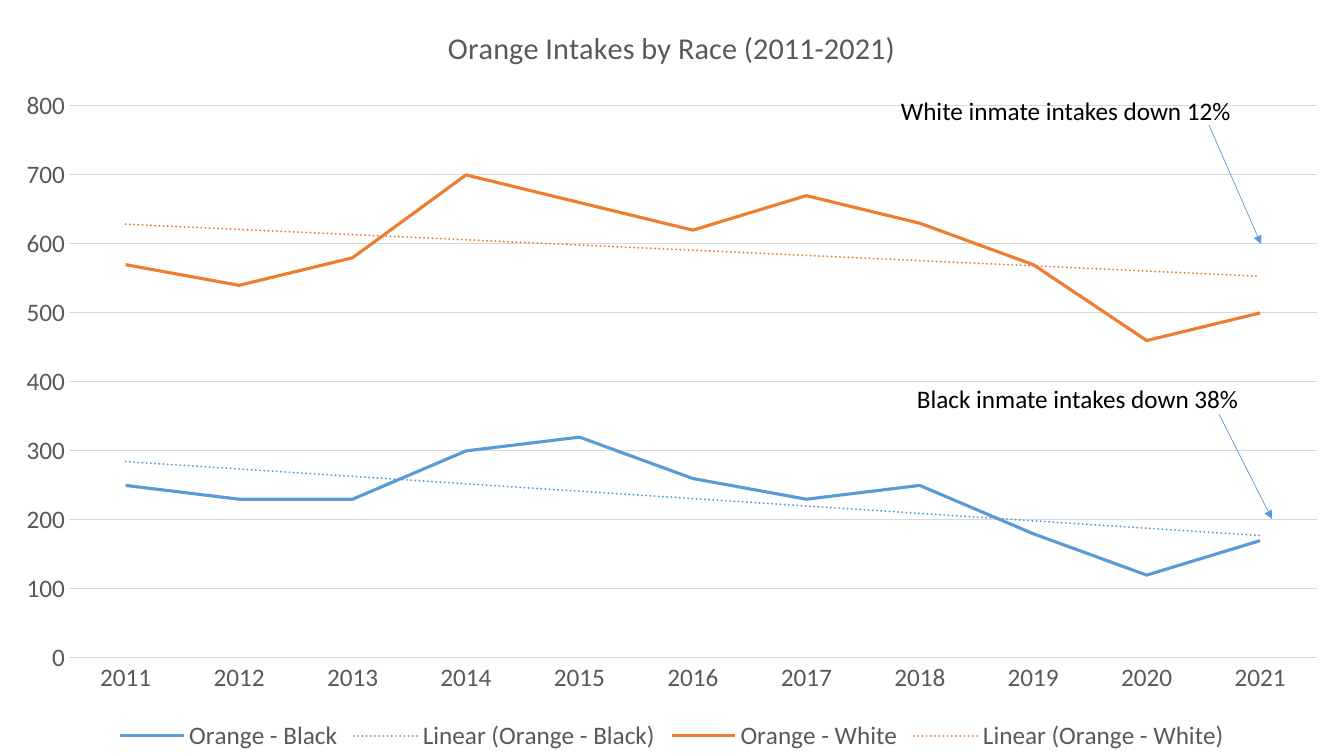
from collections import namedtuple
from dataclasses import dataclass

from lxml.etree import SubElement
from pptx import Presentation
from pptx.chart.data import CategoryChartData
from pptx.dml.color import RGBColor
from pptx.enum.chart import XL_CHART_TYPE, XL_LEGEND_POSITION, XL_TICK_MARK
from pptx.enum.shapes import MSO_CONNECTOR
from pptx.enum.text import MSO_AUTO_SIZE
from pptx.oxml import parse_xml
from pptx.oxml.ns import nsdecls, qn
from pptx.util import Emu, Pt

WIDE, HIGH = 1344, 756
SCALE = 12192000 / WIDE

Box = namedtuple("Box", "x y w h")


@dataclass(frozen=True)
class Theme:
    font: str = "Calibri"
    body: float = 18
    title: float = 21.6
    ink: str = "000000"
    gray: str = "595959"
    grid: str = "D9D9D9"
    blue: str = "5B9BD5"
    orange: str = "ED7D31"


THEME = Theme()
YEARS = [str(year) for year in range(2011, 2022)]
INTAKES = [
    ("Orange - Black", THEME.blue,
     (250, 230, 230, 300, 320, 260, 230, 250, 180, 120, 170)),
    ("Orange - White", THEME.orange,
     (570, 540, 580, 700, 660, 620, 670, 630, 570, 460, 500)),
]
# Text, its box, and the arrow's start and end measured from that box
NOTES = [
    ("White inmate intakes down 12%", Box(891, 90, 354, 40), (318, 35), (370, 154)),
    ("Black inmate intakes down 38%", Box(907, 378, 354, 40), (312, 36), (365, 141)),
]


def px(count):
    return Emu(round(count * SCALE))


def style(font, size=THEME.body, color=THEME.ink):
    font.name, font.size, font.bold = THEME.font, Pt(size), False
    font.color.rgb = RGBColor.from_string(color)


def write(frame, text, **look):
    run = frame.paragraphs[0].add_run()
    run.text = text
    style(run.font, **look)


def stroke(line, color, width):
    line.color.rgb = RGBColor.from_string(color)
    line.width = Pt(width)


def add_trend(series, color):
    """Add a dotted linear trend line, which the schema puts before c:cat."""
    trend = parse_xml(
        f'<c:trendline {nsdecls("c", "a")}><c:spPr><a:ln w="{Pt(1.5)}" cap="rnd">'
        f'<a:solidFill><a:srgbClr val="{color}"/></a:solidFill>'
        '<a:prstDash val="sysDot"/></a:ln></c:spPr>'
        '<c:trendlineType val="linear"/><c:dispRSqr val="0"/>'
        '<c:dispEq val="0"/></c:trendline>')
    series._element.find(qn("c:cat")).addprevious(trend)


def set_plot(chart, box, plot):
    """Fix the inner plot area, given in px within the chart's box."""
    area = chart._chartSpace.chart.plotArea
    for old in area.findall(qn("c:layout")):
        area.remove(old)
    spots = {"x": plot.x / box.w, "y": plot.y / box.h,
             "w": plot.w / box.w, "h": plot.h / box.h}
    modes = "".join(f'<c:{key}Mode val="edge"/>' for key in "xy")
    sizes = "".join(f'<c:{key} val="{val:.4f}"/>' for key, val in spots.items())
    area.insert(0, parse_xml(
        f'<c:layout {nsdecls("c")}><c:manualLayout>'
        f'<c:layoutTarget val="inner"/>{modes}{sizes}'
        '</c:manualLayout></c:layout>'))


def format_axes(chart):
    years, counts = chart.category_axis, chart.value_axis
    for axis in (years, counts):
        axis.major_tick_mark = axis.minor_tick_mark = XL_TICK_MARK.NONE
        style(axis.tick_labels.font, color=THEME.gray)
    stroke(years.format.line, THEME.grid, 0.75)
    counts.format.line.fill.background()
    counts.minimum_scale, counts.maximum_scale, counts.major_unit = 0, 800, 100
    counts.has_major_gridlines = True
    stroke(counts.major_gridlines.format.line, THEME.grid, 0.75)


def add_trends(slide, box):
    data = CategoryChartData(number_format="General")
    data.categories = YEARS
    for name, _, counts in INTAKES:
        data.add_series(name, counts)
    chart = slide.shapes.add_chart(
        XL_CHART_TYPE.LINE, *map(px, box), data).chart
    style(chart.font)
    chart.has_title = True
    write(chart.chart_title.text_frame, "Orange Intakes by Race (2011-2021)",
          size=THEME.title, color=THEME.gray)
    chart.chart_title.include_in_layout = False
    chart.has_legend = True
    chart.legend.position = XL_LEGEND_POSITION.BOTTOM
    chart.legend.include_in_layout = False
    style(chart.legend.font, color=THEME.gray)
    chart.plots[0].vary_by_categories = False
    format_axes(chart)
    for series, (_, color, _) in zip(chart.plots[0].series, INTAKES):
        series.smooth = False
        stroke(series.format.line, color, 2.25)
        add_trend(series, color)
    set_plot(chart, box, Box(69, 106, box.w - 96, box.h - 204))


def add_note(slide, text, box, start, end):
    frame = slide.shapes.add_textbox(*map(px, box)).text_frame
    frame.word_wrap = True
    frame.auto_size = MSO_AUTO_SIZE.SHAPE_TO_FIT_TEXT
    write(frame, text)
    ends = [px(base + step) for point in (start, end)
            for base, step in zip((box.x, box.y), point)]
    arrow = slide.shapes.add_connector(MSO_CONNECTOR.STRAIGHT, *ends)
    stroke(arrow.line, THEME.blue, 0.5)
    SubElement(arrow.line._get_or_add_ln(), qn("a:tailEnd"), type="triangle")
    SubElement(arrow._element.spPr, qn("a:effectLst"))


def main():
    deck = Presentation()
    deck.slide_width, deck.slide_height = px(WIDE), px(HIGH)
    slide = deck.slides.add_slide(deck.slide_layouts[6])
    add_trends(slide, Box(0, 0, WIDE, HIGH))
    for note in NOTES:
        add_note(slide, *note)
    deck.save("out.pptx")


if __name__ == "__main__":
    main()
